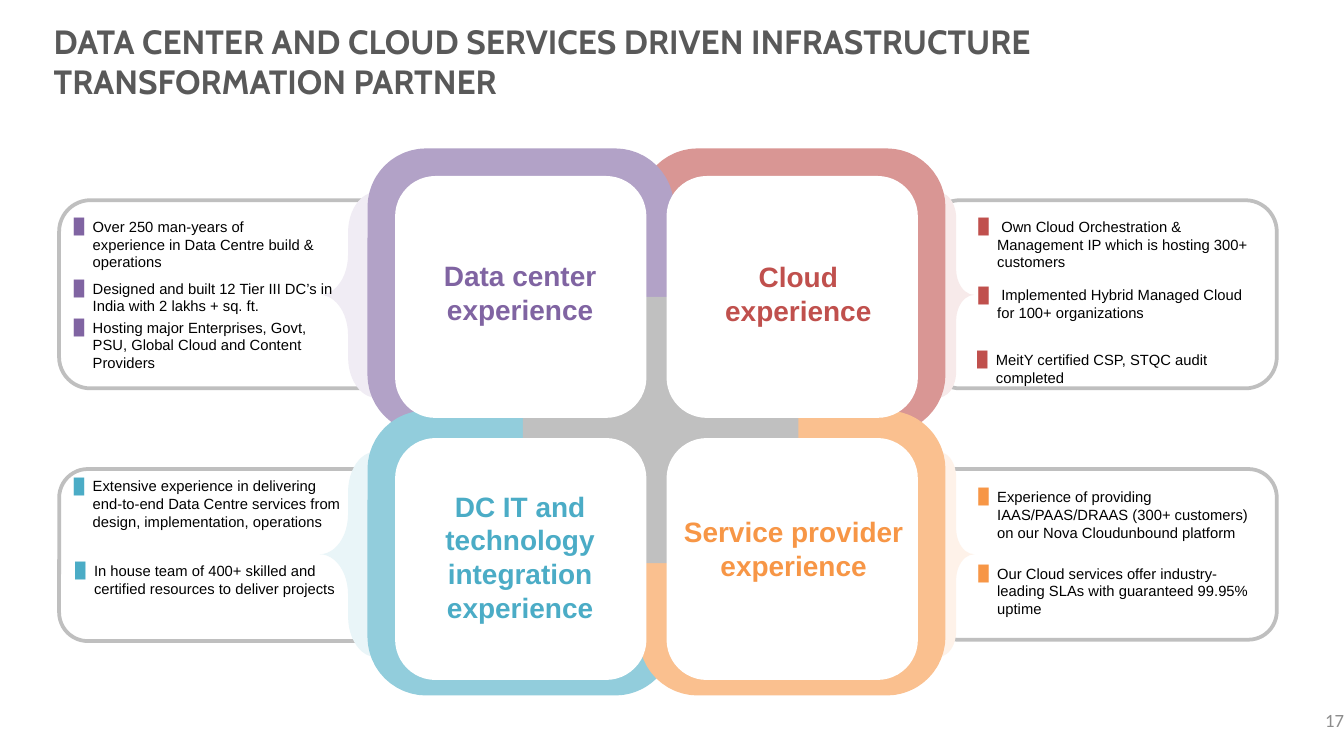
from dataclasses import dataclass

from pptx import Presentation
from pptx.dml.color import RGBColor
from pptx.enum.shapes import MSO_SHAPE
from pptx.enum.text import MSO_ANCHOR, PP_ALIGN
from pptx.oxml.ns import qn
from pptx.util import Inches, Pt
from lxml import etree


@dataclass(frozen=True)
class Theme:
    title: str = "595959"
    number: str = "8C8C8C"
    body: str = "000000"
    frame: str = "BFBFBF"
    core: str = "C0C0C0"
    card: str = "FFFFFF"
    title_pt: float = 18
    label_pt: float = 15
    body_pt: float = 7.9
    number_pt: float = 10


@dataclass(frozen=True)
class Quadrant:
    col: int
    row: int
    accent: str
    ring: str
    tint: str
    label: str
    label_box: tuple  # measured from the ring
    bullets: tuple  # (left, top, width, text), measured from the panel


THEME = Theme()
COLS, ROWS = (2.86, 4.88), (1.23, 3.18)
RING_W, RING_H = 2.03, 1.87
PANELS = {(0, 0): (0.44, 1.49, 2.67, 1.4), (1, 0): (6.91, 1.49, 2.59, 1.4),
          (0, 1): (0.44, 3.49, 2.79, 1.28), (1, 1): (6.91, 3.49, 2.59, 1.27)}

# Listed from back to front
QUADRANTS = (
    Quadrant(1, 0, "C0504D", "D99694", "F7EAEA", "Cloud experience", (0.26, 0.36, 1.6, 1.18), (
        (0.37, 0.13, 2.16, " Own Cloud Orchestration & Management IP which is hosting 300+ customers"),
        (0.37, 0.64, 2, " Implemented Hybrid Managed Cloud for 100+ organizations"),
        (0.36, 1.12, 2, "MeitY certified CSP, STQC audit completed"))),
    Quadrant(0, 0, "8064A2", "B2A2C7", "F0ECF4", "Data center experience", (0.27, 0.26, 1.48, 1.37), (
        (0.11, 0.13, 1.83, "Over 250 man-years of experience in Data Centre build & operations"),
        (0.11, 0.59, 2, "Designed and built 12 Tier III DC’s in India with 2 lakhs + sq. ft."),
        (0.11, 0.88, 1.83, "Hosting major Enterprises, Govt, PSU, Global Cloud and Content Providers"))),
    Quadrant(0, 1, "4BACC6", "92CDDC", "E9F5F8", "DC IT and technology integration experience",
             (0.14, 0.37, 1.74, 1.18), (
        (0.11, 0.06, 2.03, "Extensive experience in delivering end-to-end Data Centre services "
                           "from design, implementation, operations"),
        (0.12, 0.69, 1.99, "In house team of 400+ skilled and certified resources to deliver projects"))),
    Quadrant(1, 1, "F79646", "FAC08F", "FEF2E9", "Service provider experience",
             (0.15, 0.31, 1.75, 1.18), (
        (0.37, 0.14, 2.07, "Experience of providing IAAS/PAAS/DRAAS (300+ customers) "
                           "on our Nova Cloudunbound platform"),
        (0.37, 0.71, 2.07, "Our Cloud services offer industry-leading SLAs with guaranteed 99.95% uptime"))),
)


def rgb(value):
    return RGBColor.from_string(value)


def add_shape(s, kind, box, fill=None, line=None, weight=0):
    sp = s.shapes.add_shape(kind, *map(Inches, box))
    sp.shadow.inherit = False
    if fill:
        sp.fill.solid()
        sp.fill.fore_color.rgb = rgb(fill)
    else:
        sp.fill.background()
    if line:
        sp.line.color.rgb = rgb(line)
        sp.line.width = Pt(weight)
    else:
        sp.line.fill.background()
    return sp


def add_text(s, box, content, size, color, font="Arial", bold=False,
             align=PP_ALIGN.LEFT, anchor=MSO_ANCHOR.MIDDLE, insets=(0, 0, 0, 0), bullet=None):
    tf = s.shapes.add_textbox(*map(Inches, box)).text_frame
    tf.word_wrap = True
    tf.vertical_anchor = anchor
    tf.margin_left, tf.margin_top, tf.margin_right, tf.margin_bottom = map(Inches, insets)
    tf.text = content
    p = tf.paragraphs[0]
    p.alignment = align
    if bullet:
        add_bullet(p, bullet)
    f = p.runs[0].font
    f.name, f.size, f.bold = font, Pt(size), bold
    f.color.rgb = rgb(color)


def add_bullet(p, color):
    pPr = p._p.get_or_add_pPr()
    pPr.set("marL", str(Inches(0.14)))
    pPr.set("indent", str(-Inches(0.14)))
    bu_color = etree.SubElement(pPr, qn("a:buClr"))
    etree.SubElement(bu_color, qn("a:srgbClr"), val=color)
    etree.SubElement(pPr, qn("a:buFont"), typeface="Arial")
    etree.SubElement(pPr, qn("a:buChar"), char="█")


def add_panel(s, box):
    add_shape(s, MSO_SHAPE.ROUNDED_RECTANGLE, box, line=THEME.frame, weight=2)


def add_flap(s, q, top):
    """Tinted brace that links a quadrant to its side panel."""
    height = 1.53
    block_left, brace_left, brace_w = ((2.8, 2.38, 0.42), (6.29, 6.98, 0.27))[q.col]
    add_shape(s, MSO_SHAPE.RECTANGLE, (block_left, top, 0.71, height), q.tint)
    brace = add_shape(s, MSO_SHAPE.LEFT_BRACE, (brace_left, top, brace_w, height), q.tint)
    brace.adjustments[0] = 0.714
    if q.col == 1:
        brace._element.spPr.find(qn("a:xfrm")).set("flipH", "1")


def add_ring(s, q, x, y):
    add_shape(s, MSO_SHAPE.ROUNDED_RECTANGLE, (x, y, RING_W, RING_H), q.ring, q.ring, 18)


def add_card(s, q, x, y):
    add_shape(s, MSO_SHAPE.ROUNDED_RECTANGLE, (x + 0.08, y + 0.08, 1.87, 1.8), THEME.card)
    dx, dy, w, h = q.label_box
    add_text(s, (x + dx, y + dy, w, h), q.label, THEME.label_pt, q.accent,
             bold=True, align=PP_ALIGN.CENTER)


def add_bullets(s, q, panel):
    for dx, dy, width, content in q.bullets:
        add_text(s, (panel[0] + dx, panel[1] + dy, width, 0.4), content, THEME.body_pt,
                 THEME.body, anchor=MSO_ANCHOR.TOP, bullet=q.accent)


def add_heading(s, box):
    add_text(s, box, "DATA CENTER AND CLOUD SERVICES DRIVEN INFRASTRUCTURE TRANSFORMATION PARTNER",
             THEME.title_pt, THEME.title, "Cabin", bold=True, insets=(0, 0.05, 0.1, 0.05))


def add_page_number(s, box):
    add_text(s, box, "17", THEME.number_pt, THEME.number, "Calibri",
             align=PP_ALIGN.RIGHT, insets=(0.1, 0.05, 0, 0.05))


def main():
    prs = Presentation()
    prs.slide_width = Inches(10)
    prs.slide_height = prs.slide_width * 9 // 16
    s = prs.slides.add_slide(prs.slide_layouts[6])
    add_heading(s, (0.4, 0.1, 8.24, 0.71))
    add_page_number(s, (7.75, 5.21, 2.25, 0.3))
    for q in QUADRANTS:
        add_panel(s, PANELS[q.col, q.row])
        add_flap(s, q, (1.43, 3.36)[q.row])
    for q in QUADRANTS:
        add_ring(s, q, COLS[q.col], ROWS[q.row])
    add_shape(s, MSO_SHAPE.RECTANGLE, (3.89, 2.21, 2.05, 1.98), THEME.core)
    for q in QUADRANTS:
        add_card(s, q, COLS[q.col], ROWS[q.row])
        add_bullets(s, q, PANELS[q.col, q.row])
    prs.save("out.pptx")


if __name__ == "__main__":
    main()
